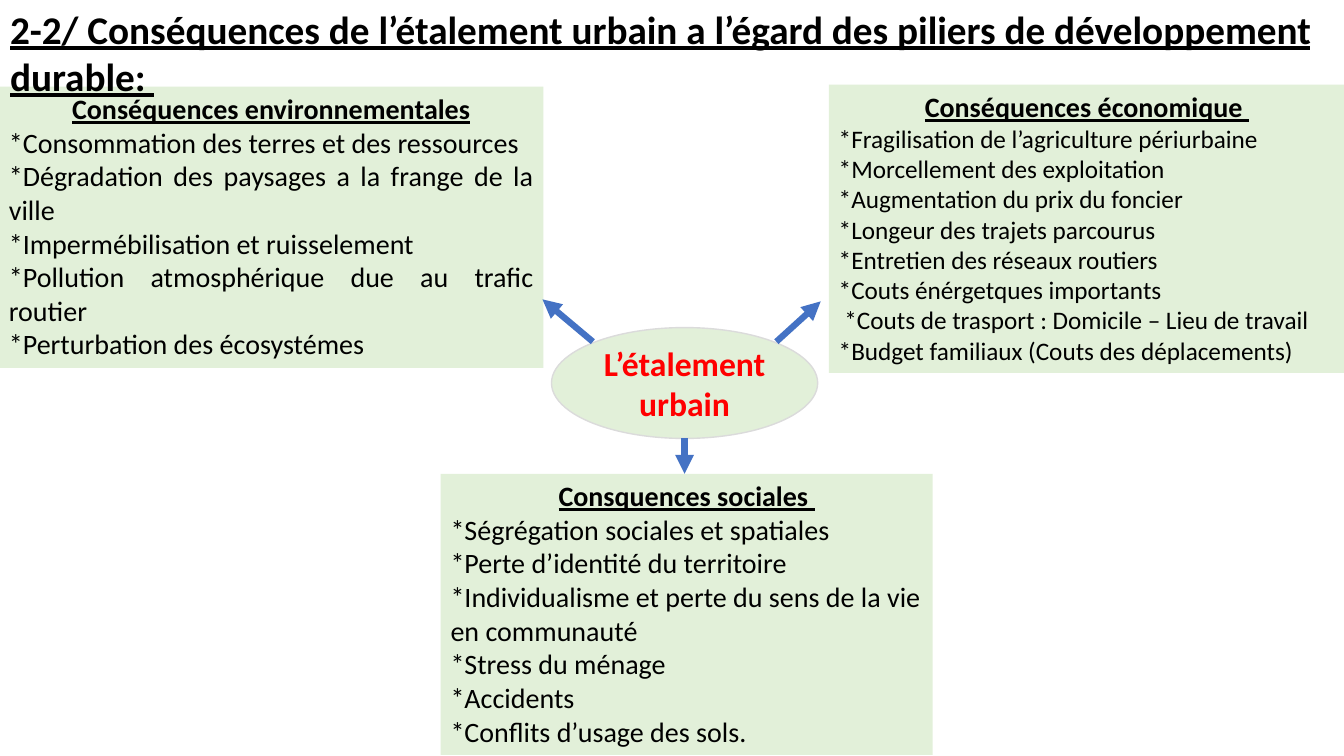
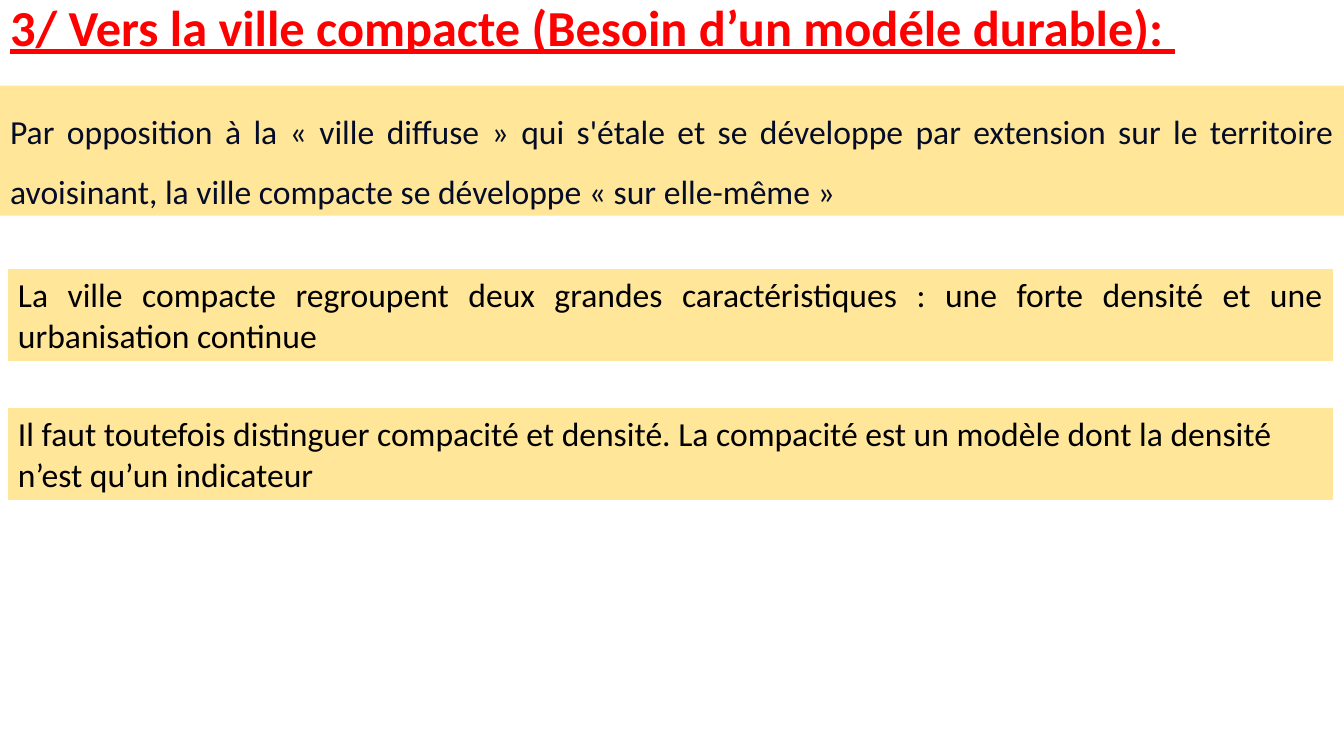
from lxml import etree
from pptx import Presentation
from pptx.dml.color import RGBColor
from pptx.enum.shapes import MSO_CONNECTOR, MSO_SHAPE
from pptx.enum.text import MSO_ANCHOR, MSO_AUTO_SIZE, PP_ALIGN
from pptx.oxml.ns import qn
from pptx.util import Inches, Pt

RECTANGLE, OVAL = MSO_SHAPE.RECTANGLE, MSO_SHAPE.OVAL
STRAIGHT = MSO_CONNECTOR.STRAIGHT
TOP, MIDDLE, BOTTOM = MSO_ANCHOR.TOP, MSO_ANCHOR.MIDDLE, MSO_ANCHOR.BOTTOM
LEFT, CENTER, JUSTIFY = PP_ALIGN.LEFT, PP_ALIGN.CENTER, PP_ALIGN.JUSTIFY
NO_FIT = MSO_AUTO_SIZE.NONE

FONT = "Calibri"
BLACK, RED, NAVY = "000000", "FF0000", "040C28"
GREEN, YELLOW, BLUE, GREY = "E2F0D9", "FFE699", "4472C4", "DBDBDB"
TITLE_LAYOUT, TITLE_ONLY_LAYOUT = 0, 5
WIDTH, HEIGHT = 13.33, 7.5

ENVIRONMENT = [
    "*Consommation des terres et des ressources",
    "*Dégradation des paysages a la frange de la ville",
    "*Impermébilisation et ruisselement",
    "*Pollution atmosphérique due au trafic routier",
    "*Perturbation des écosystémes",
]
ECONOMY = [
    "*Fragilisation de l’agriculture périurbaine",
    "*Morcellement des exploitation",
    "*Augmentation du prix du foncier",
    "*Longeur des trajets parcourus",
    "*Entretien des réseaux routiers",
    "*Couts énérgetques importants",
    " *Couts de trasport : Domicile – Lieu de travail",
    "*Budget familiaux (Couts des déplacements)",
]
SOCIETY = [
    "*Ségrégation sociales et spatiales",
    "*Perte d’identité du territoire",
    "*Individualisme et perte du sens de la vie en communauté",
    "*Stress du ménage",
    "*Accidents",
    "*Conflits d’usage des sols.",
]
DIFFUSE_CITY = (
    "Par opposition à la « ville diffuse » qui s'étale et se développe par extension "
    "sur le territoire avoisinant, la ville compacte se développe « sur elle-même »"
)
TRAITS = (
    "La ville compacte regroupent deux grandes caractéristiques : "
    "une forte densité et une urbanisation continue"
)
DENSITY = (
    "Il faut toutefois distinguer compacité et densité. La compacité est un modèle "
    "dont la densité n’est qu’un indicateur"
)


def rgb(color):
    return RGBColor.from_string(color)


def paint(shape, fill):
    shape.fill.solid()
    shape.fill.fore_color.rgb = rgb(fill)


def place(shape, box):
    shape.left, shape.top, shape.width, shape.height = map(Inches, box)


def write(paragraph, text, size, color=BLACK, align=LEFT, bold=False, underline=False):
    paragraph.text = text
    paragraph.alignment = align
    font = paragraph.font
    font.name, font.size, font.color.rgb = FONT, Pt(size), rgb(color)
    font.bold, font.underline = bold, underline


def set_frame(shape, anchor):
    frame = shape.text_frame
    frame.word_wrap = True
    frame.auto_size = NO_FIT
    frame.vertical_anchor = anchor
    return frame.paragraphs[0]


def add_title(slide, box, text, size, color, anchor, spacing):
    title = slide.shapes.title
    place(title, box)
    heading = set_frame(title, anchor)
    write(heading, text, size, color, bold=True, underline=True)
    heading.line_spacing = spacing
    return title


def add_block(slide, box, fill, preset=RECTANGLE, anchor=TOP):
    block = slide.shapes.add_shape(preset, *map(Inches, box))
    block.shadow.inherit = False
    paint(block, fill)
    block.line.fill.background()
    return block, set_frame(block, anchor)


def add_pillar(slide, box, heading, effects, size=20, align=LEFT):
    pillar, first = add_block(slide, box, GREEN)
    write(first, heading, 20, align=CENTER, bold=True, underline=True)
    for effect in effects:
        write(pillar.text_frame.add_paragraph(), effect, size, align=align)


def add_hub(slide, box, text):
    hub, label = add_block(slide, box, GREEN, OVAL, MIDDLE)
    hub.line.color.rgb = rgb(GREY)
    hub.line.width = Pt(1)
    write(label, text, 24, RED, CENTER, bold=True)


def add_arrow(slide, start, end):
    arrow = slide.shapes.add_connector(STRAIGHT, *map(Inches, start + end))
    arrow.line.color.rgb = rgb(BLUE)
    arrow.line.width = Pt(4.5)
    properties = arrow.element.spPr
    etree.SubElement(properties.find(qn("a:ln")), qn("a:tailEnd"), type="triangle")
    etree.SubElement(properties, qn("a:effectLst"))


def add_statement(slide, box, text, align):
    write(add_block(slide, box, YELLOW)[1], text, 24, align=align)


def add_definition(slide, box, text):
    definition = slide.placeholders[1]
    place(definition, box)
    paint(definition, YELLOW)
    paragraph = set_frame(definition, TOP)
    write(paragraph, text, 24, NAVY, JUSTIFY)
    paragraph.line_spacing = 1.5
    paragraph.space_before = Pt(10)


def build_consequences(deck):
    slide = deck.slides.add_slide(deck.slide_layouts[TITLE_ONLY_LAYOUT])
    add_hub(slide, (5.47, 3.25, 2.64, 1.1), "L’étalement urbain")
    add_pillar(slide, (-0.01, 0.86, 5.4, 2.79), "Conséquences environnementales",
               ENVIRONMENT, align=JUSTIFY)
    add_pillar(slide, (8.22, 0.84, 5.12, 2.86), "Conséquences économique ", ECONOMY, 18)
    add_pillar(slide, (4.37, 4.7, 4.88, 2.79), "Consquences sociales ", SOCIETY)
    for start, end in (
        ((7.7, 3.39), (8.14, 2.99)),
        ((5.88, 3.39), (5.38, 2.97)),
        ((6.79, 4.35), (6.79, 4.7)),
    ):
        add_arrow(slide, start, end)
    title = add_title(
        slide, (0, 0, WIDTH, 1.04),
        "2-2/ Conséquences de l’étalement urbain a l’égard des piliers de développement durable: ",
        28, BLACK, TOP, 1.0)
    title.element.getparent().append(title.element)


def build_compact_city(deck):
    slide = deck.slides.add_slide(deck.slide_layouts[TITLE_LAYOUT])
    add_title(slide, (0, 0, 12.66, 0.62),
              "3/ Vers la ville compacte (Besoin d’un modéle durable): ",
              36, RED, BOTTOM, 0.9)
    add_definition(slide, (0, 0.85, WIDTH, 1.29), DIFFUSE_CITY)
    for row, (text, align) in enumerate(((TRAITS, JUSTIFY), (DENSITY, LEFT))):
        add_statement(slide, (0.08, 2.67 + row * 1.38, 13.14, 0.91), text, align)


def main():
    deck = Presentation()
    deck.slide_width, deck.slide_height = Inches(WIDTH), Inches(HEIGHT)
    build_consequences(deck)
    build_compact_city(deck)
    deck.save("out.pptx")


if __name__ == "__main__":
    main()
